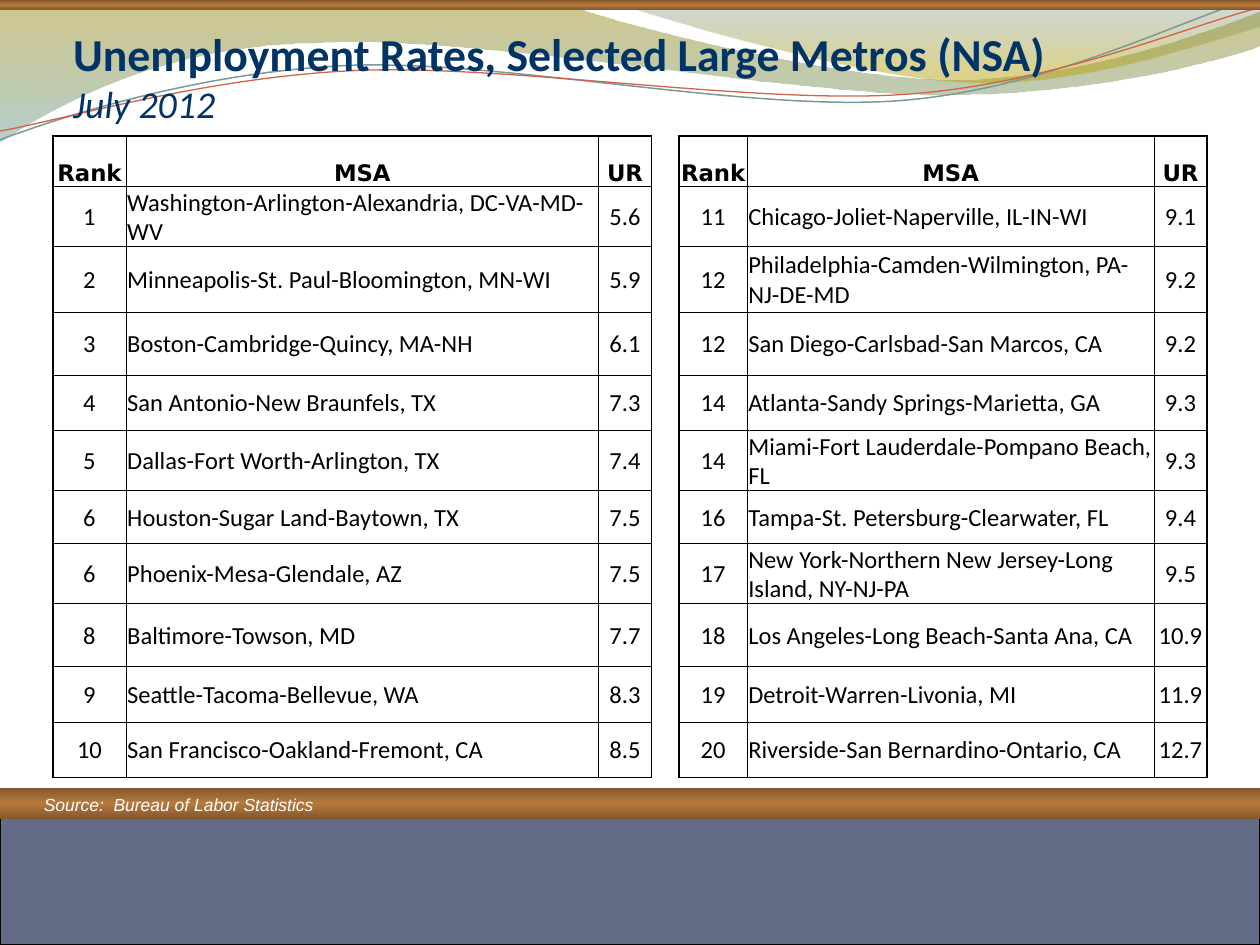
from lxml import etree
from pptx import Presentation, util as u
from pptx.dml.color import RGBColor
from pptx.enum import shapes, text
from pptx.oxml import ns

NAVY = RGBColor(0x00, 0x33, 0x66)
BLACK = RGBColor(0x00, 0x00, 0x00)
WHITE = RGBColor(0xFF, 0xFF, 0xFF)
SLATE = RGBColor(0x64, 0x6B, 0x86)
TEAL = RGBColor(0x7C, 0x99, 0x9A)
RED = RGBColor(0xD1, 0x63, 0x49)
BRONZE = RGBColor(0x83, 0x57, 0x2C)
COPPER = RGBColor(0xB7, 0x7A, 0x3D)
OLIVE = RGBColor(0x97, 0x85, 0x00)
AQUA = RGBColor(0x77, 0xA5, 0xA6)
SAGE = RGBColor(0x64, 0x84, 0x84)
GOLD = RGBColor(0xB4, 0x9F, 0x00)

WIDTH, HEIGHT = 10, 7.5
TITLE = "Unemployment Rates, Selected Large Metros (NSA)"
SUBTITLE = "July 2012"
SOURCE = "Source:  Bureau of Labor Statistics"
HEADINGS = ("Rank", "MSA", "UR")
METROS = [
    ("1", "Washington-Arlington-Alexandria, DC-VA-MD-WV", "5.6"),
    ("2", "Minneapolis-St. Paul-Bloomington, MN-WI", "5.9"),
    ("3", "Boston-Cambridge-Quincy, MA-NH", "6.1"),
    ("4", "San Antonio-New Braunfels, TX", "7.3"),
    ("5", "Dallas-Fort Worth-Arlington, TX", "7.4"),
    ("6", "Houston-Sugar Land-Baytown, TX", "7.5"),
    ("6", "Phoenix-Mesa-Glendale, AZ", "7.5"),
    ("8", "Baltimore-Towson, MD", "7.7"),
    ("9", "Seattle-Tacoma-Bellevue, WA", "8.3"),
    ("10", "San Francisco-Oakland-Fremont, CA", "8.5"),
    ("11", "Chicago-Joliet-Naperville, IL-IN-WI", "9.1"),
    ("12", "Philadelphia-Camden-Wilmington, PA-NJ-DE-MD", "9.2"),
    ("12", "San Diego-Carlsbad-San Marcos, CA", "9.2"),
    ("14", "Atlanta-Sandy Springs-Marietta, GA", "9.3"),
    ("14", "Miami-Fort Lauderdale-Pompano Beach, FL", "9.3"),
    ("16", "Tampa-St. Petersburg-Clearwater, FL", "9.4"),
    ("17", "New York-Northern New Jersey-Long Island, NY-NJ-PA", "9.5"),
    ("18", "Los Angeles-Long Beach-Santa Ana, CA", "10.9"),
    ("19", "Detroit-Warren-Livonia, MI", "11.9"),
    ("20", "Riverside-San Bernardino-Ontario, CA", "12.7"),
]
HALF = len(METROS) // 2
COLUMNS = (0.58, 3.75, 0.42, 0.22, 0.54, 3.23, 0.42)
ROWS = (0.4, 0.42, 0.52, 0.5, 0.44, 0.44, 0.42, 0.35, 0.5, 0.44, 0.44)
TABLE_HEIGHT = 5.07
GAP_COLUMN = 3

BAR_STOPS = [(0, BRONZE, 100), (50, COPPER, 100), (100, BRONZE, 100)]
WAVES = [
    ((0, -0.01),
     [[(4.4, -0.01)], [(4.76, 0.17), (6.64, 0.63), (7.58, 0.63)],
      [(8.53, 0.63), (9.58, 0.26), (10, 0.09)], [(10.01, 0.36)],
      [(9.83, 0.44), (8.7, 0.76), (7.46, 0.75)],
      [(6.22, 0.75), (3.82, 0.28), (2.57, 0.34)],
      [(1.29, 0.35), (0.46, 0.83), (-0.01, 1.13)], [(0, -0.01)]],
     [(0, OLIVE, 45), (100, AQUA, 55)]),
    ((4.79, -0.01),
     [[(5.09, 0.11), (6.82, 0.62), (7.69, 0.65)],
      [(8.56, 0.69), (9.61, 0.32), (10, 0.21)], [(10, 0)], [(4.79, -0.01)]],
     [(0, SAGE, 30), (80, GOLD, 45)]),
]
STRANDS = [
    ((0, 1.11),
     [[(0.48, 0.93), (1.58, 0.57), (2.77, 0.52)],
      [(3.95, 0.47), (5.93, 0.89), (7.13, 0.8)],
      [(8.33, 0.71), (9.38, 0.15), (9.98, -0.02)]], TEAL, 0.85),
    ((0, 1.04),
     [[(0.47, 0.96), (1.64, 0.61), (2.83, 0.56)],
      [(4.03, 0.51), (5.97, 0.83), (7.17, 0.75)],
      [(8.36, 0.67), (9.41, 0.21), (10, 0.06)]], RED, 0.75),
]


def add_curve(slide, start, segments, close):
    builder = slide.shapes.build_freeform(*map(u.Inches, start), scale=1.0)
    builder.add_line_segments([(u.Inches(x), u.Inches(y)) for segment in segments
                               for x, y in segment], close=close)
    shape = builder.convert_to_shape()
    shape.shadow.inherit = False
    lines = iter(shape._element.findall(".//" + ns.qn("a:lnTo")))
    for segment in segments:
        group = [next(lines) for point in segment]
        if len(group) == 3:
            curve = etree.Element(ns.qn("a:cubicBezTo"))
            group[0].addprevious(curve)
            for line in group:
                curve.append(line[0])
                line.getparent().remove(line)
    return shape


def shade(shape, stops):
    shape.line.fill.background()
    shape.fill.gradient()
    shape.fill.gradient_angle = 270
    stop_list = shape._element.spPr.find(".//" + ns.qn("a:gsLst"))
    for old in list(stop_list):
        stop_list.remove(old)
    for position, color, opacity in stops:
        stop = etree.SubElement(stop_list, ns.qn("a:gs"), pos=str(position * 1000))
        tint = etree.SubElement(stop, ns.qn("a:srgbClr"), val=str(color))
        if opacity < 100:
            etree.SubElement(tint, ns.qn("a:alpha"), val=str(opacity * 1000))


def add_band(slide, top, height):
    shape = slide.shapes.add_shape(shapes.MSO_SHAPE.RECTANGLE, 0, u.Inches(top),
                                   u.Inches(WIDTH), u.Inches(height))
    shape.shadow.inherit = False
    return shape


def add_run(paragraph, words, font, size, color, bold=False, italic=False):
    run = paragraph.add_run()
    run.text = words
    run.font.name, run.font.size, run.font.color.rgb = font, u.Pt(size), color
    run.font.bold, run.font.italic = bold, italic


def set_borders(cell, widths):
    properties = cell._tc.get_or_add_tcPr()
    for index, (side, width) in enumerate(zip("LRTB", widths)):
        line = etree.Element(ns.qn("a:ln" + side), w=str(u.Pt(width)))
        if width:
            fill = etree.SubElement(line, ns.qn("a:solidFill"))
            etree.SubElement(fill, ns.qn("a:srgbClr"), val=str(BLACK))
        else:
            etree.SubElement(line, ns.qn("a:noFill"))
        properties.insert(index, line)


def add_decor(slide):
    for start, segments, stops in WAVES:
        shade(add_curve(slide, start, segments, True), stops)
    for start, segments, color, width in STRANDS:
        strand = add_curve(slide, start, segments, False)
        strand.fill.background()
        strand.line.color.rgb, strand.line.width = color, u.Pt(width)
    shade(add_band(slide, 0, 0.08), BAR_STOPS)
    footer = add_band(slide, 6.42, HEIGHT - 6.42)
    footer.fill.solid()
    footer.fill.fore_color.rgb = SLATE
    footer.line.color.rgb, footer.line.width = BLACK, u.Pt(0.75)
    shade(add_band(slide, 6.25, 0.25), BAR_STOPS)


def add_title(slide):
    title = slide.shapes.title
    slide.shapes._spTree.append(title._element)
    title.left, title.top, title.width, title.height = map(u.Inches, (0.58, 0.25, 8.92, 0.75))
    frame = title.text_frame
    frame.auto_size, frame.word_wrap = text.MSO_AUTO_SIZE.NONE, True
    frame.vertical_anchor = text.MSO_ANCHOR.BOTTOM
    frame.margin_left = frame.margin_right = frame.margin_bottom = 0
    paragraph = frame.paragraphs[0]
    paragraph.alignment = text.PP_ALIGN.LEFT
    add_run(paragraph, TITLE, "Calibri", 26.1, NAVY, bold=True)
    paragraph.add_line_break()
    add_run(paragraph, SUBTITLE, "Calibri", 21.6, NAVY, italic=True)


def add_source(slide):
    box = slide.shapes.add_textbox(*map(u.Inches, (0.25, 6.25, 6, 0.27)))
    box.text_frame.word_wrap = True
    add_run(box.text_frame.paragraphs[0], SOURCE, "Arial", 10, WHITE, italic=True)


def add_rates(slide):
    frame = slide.shapes.add_table(len(ROWS), len(COLUMNS), u.Inches(0.42), u.Inches(1.08),
                                   u.Inches(sum(COLUMNS)), u.Inches(TABLE_HEIGHT))
    table = frame.table
    table.first_row = table.horz_banding = False
    for column, width in zip(table.columns, COLUMNS):
        column.width = u.Inches(width)
    for row, height in zip(table.rows, ROWS):
        row.height = u.Inches(height)
    frame.height = u.Inches(TABLE_HEIGHT)
    lines = [HEADINGS + ("",) + HEADINGS]
    lines += [left + ("",) + right for left, right in zip(METROS[:HALF], METROS[HALF:])]
    for i, line in enumerate(lines):
        for j, words in enumerate(line):
            cell = table.cell(i, j)
            cell.fill.background()
            cell.margin_left = cell.margin_right = cell.margin_top = u.Inches(0.01)
            cell.margin_bottom = 0
            if j == GAP_COLUMN:
                set_borders(cell, (1, 1, 0, 0))
                continue
            field, header = j % (GAP_COLUMN + 1), i == 0
            set_borders(cell, (1 if field == 0 else 0.5, 1 if field == 2 else 0.5,
                               1 if header else 0.5, 0.5))
            cell.vertical_anchor = text.MSO_ANCHOR.BOTTOM if header else text.MSO_ANCHOR.MIDDLE
            paragraph = cell.text_frame.paragraphs[0]
            centred = header or field != 1
            paragraph.alignment = text.PP_ALIGN.CENTER if centred else text.PP_ALIGN.LEFT
            font, size = ("DejaVu Sans", 13) if header else ("Calibri", 14)
            add_run(paragraph, words, font, size, BLACK, bold=header)


def main():
    presentation = Presentation()
    presentation.slide_width, presentation.slide_height = u.Inches(WIDTH), u.Inches(HEIGHT)
    slide = presentation.slides.add_slide(presentation.slide_layouts[5])
    add_decor(slide)
    add_title(slide)
    add_source(slide)
    add_rates(slide)
    presentation.save("out.pptx")


if __name__ == "__main__":
    main()
